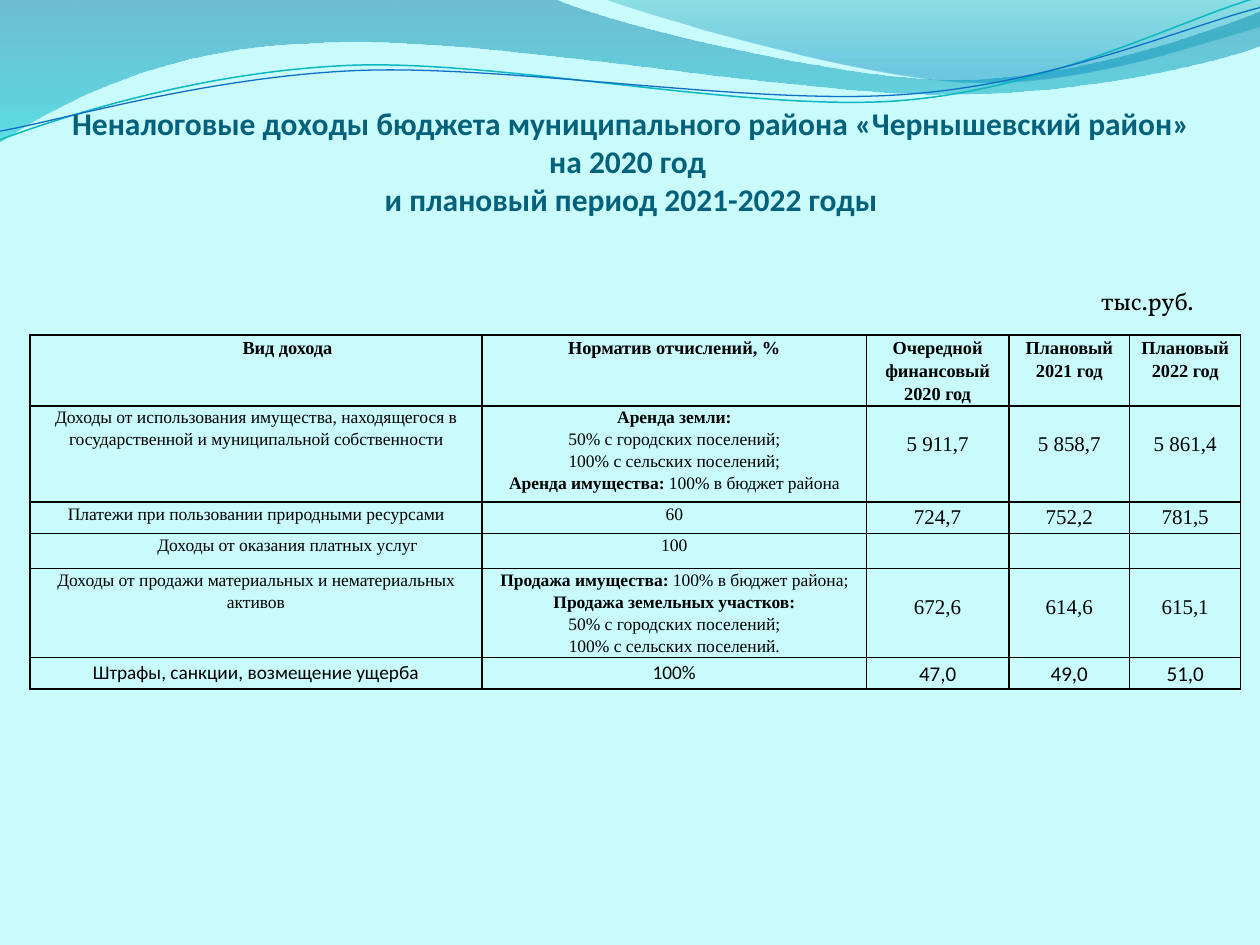
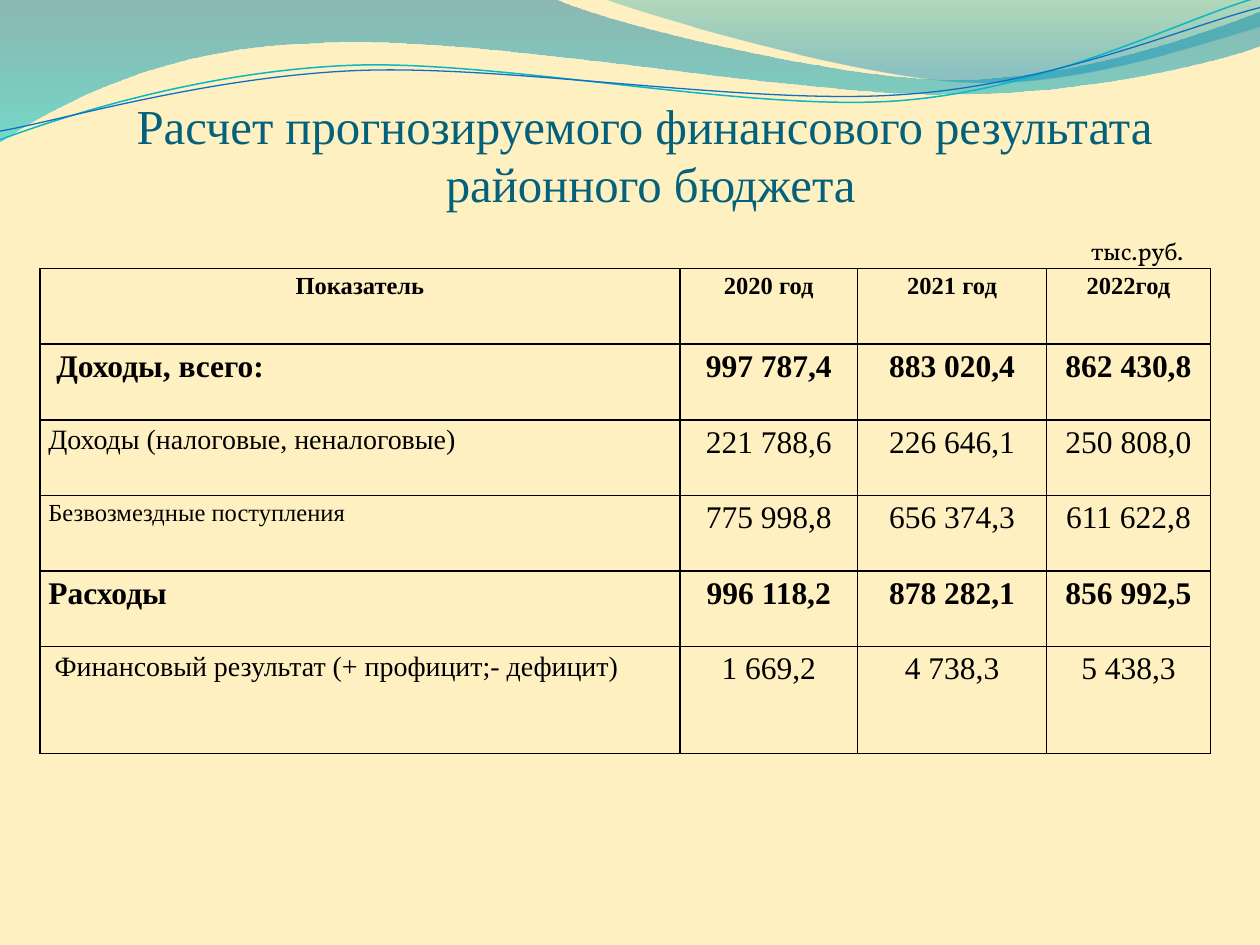
from dataclasses import dataclass, replace
from typing import Any, NamedTuple, Optional

from lxml import etree
from pptx import Presentation
from pptx.dml import color
from pptx.enum import text
from pptx.oxml import ns
from pptx.util import Pt

SERIF, SANS, LABEL_FONT = "Times New Roman", "Calibri", "Vollkorn"
TITLE_COLOR, INK = "04617B", "000000"
CENTER, JUSTIFY = text.PP_ALIGN.CENTER, text.PP_ALIGN.JUSTIFY


class Box(NamedTuple):
    left: float
    top: float
    width: float
    height: float


class Stop(NamedTuple):
    position: float
    color: str
    opacity: int


@dataclass(frozen=True)
class Wave:
    start: tuple
    segments: tuple
    stops: tuple = ()
    line_color: str = ""
    line_width: float = 0


@dataclass(frozen=True)
class Style:
    size: float
    font: str = SERIF
    bold: bool = False
    color: str = INK
    align: Any = CENTER
    line_spacing: Optional[float] = None
    space_after: float = 0


@dataclass(frozen=True)
class Cell:
    words: str
    style: Style
    left: float = 4.9
    right: float = 4.9
    top: float = 0


@dataclass(frozen=True)
class Row:
    height: float
    cells: tuple


@dataclass(frozen=True)
class BudgetSlide:
    background: str
    title: str
    title_box: Box
    title_style: Style
    unit_box: Box
    table_left: float
    table_top: float
    columns: tuple
    rows: tuple


WAVES = (
    Wave((0, 0), (
        ((316.8, -0.7),),
        ((342.7, 12.2), (478.1, 45.4), (545.8, 45.4)),
        ((614.2, 45.4), (689.8, 18.7), (720, 6.5)),
        ((720.7, 25.9),),
        ((707.8, 31.7), (626.4, 54.7), (537.1, 54)),
        ((447.8, 54), (275, 20.2), (185, 24.5)),
        ((92.9, 25.9), (33.1, 59.8), (-0.7, 81.4)),
    ), stops=(Stop(0, "0074A1", 45), Stop(1, "00C6CF", 55))),
    Wave((344.9, -0.7), (
        ((366.5, 7.9), (491, 44.6), (553.7, 46.8)),
        ((616.3, 49.7), (691.9, 23), (720, 15.1)),
        ((720, 0),),
    ), stops=(Stop(0, "00A1A9", 30), Stop(0.8, "008BBF", 45))),
    Wave((0, 79.9), (
        ((34.6, 67), (113.8, 41), (199.4, 37.4)),
        ((284.4, 33.8), (427, 64.1), (513.4, 57.6)),
        ((599.8, 51.1), (675.4, 10.8), (718.6, -1.4)),
    ), line_color="0AB8BF", line_width=0.85),
    Wave((0, 74.9), (
        ((33.8, 69.1), (118.1, 43.9), (203.8, 40.3)),
        ((290.2, 36.7), (429.8, 60.5), (516.2, 54)),
        ((601.9, 48.2), (677.5, 15.1), (720, 4.3)),
    ), line_color="0F6FC6", line_width=0.75),
)

VALUE = Style(12, line_spacing=1.15)
BODY = Style(10, line_spacing=Pt(12.55))
FINES = Style(11, SANS, line_spacing=1.15)
HEADER = Style(10.5, bold=True, line_spacing=Pt(13.2))
UNIT = Style(14, LABEL_FONT)
RESULT = Style(18, line_spacing=1.15, space_after=10)
RESULT_BOLD = replace(RESULT, bold=True)


def income_row(height: float, kind: str, norm: str, values: tuple,
               indent: float = 0, drop: float = 0, body: Style = BODY) -> Row:
    figure = replace(VALUE, font=body.font) if any(values) else body
    return Row(height, (Cell(kind, body, left=4.9 + indent), Cell(norm, body),
                        *(Cell(value, figure, top=drop) for value in values)))


def result_row(height: float, name: str, values: tuple, size: float,
               bold: bool = False, indent: float = 0) -> Row:
    label = replace(RESULT, size=size, bold=bold, align=JUSTIFY)
    figure = RESULT_BOLD if bold else RESULT
    return Row(height, (Cell(name, label, left=4.9 + indent),
                        *(Cell(value, figure) for value in values)))


def header_row(height: float, names: tuple, style: Style, margin: float,
               indent: float = 0) -> Row:
    return Row(height, tuple(
        Cell(name, style, left=margin + (0 if index else indent), right=margin)
        for index, name in enumerate(names)))


SLIDES = (
    BudgetSlide(
        "C9FAFC",
        "Неналоговые доходы бюджета муниципального района «Чернышевский район» "
        "на 2020 год \vи плановый период 2021-2022 годы",
        Box(33.8, 73.4, 653.8, 51.1), Style(18, SANS, True, TITLE_COLOR),
        Box(607.7, 163.4, 95.8, 16.6), 17, 191.4,
        (258.5, 219.6, 81.4, 69.1, 63.4),
        (
            header_row(40.5, ("Вид дохода", "Норматив отчислений, %",
                              "Очередной финансовый 2020 год",
                              "Плановый 2021 год", "Плановый 2022 год"),
                       HEADER, 2.2, indent=36),
            income_row(55, "Доходы от использования имущества, находящегося в "
                       "государственной и муниципальной собственности",
                       "Аренда земли:|\n50% с городских поселений;\n"
                       "100% с сельских поселений;\n"
                       "Аренда имущества:| 100% в бюджет района",
                       ("5 911,7", "5 858,7", "5 861,4"), drop=13.5),
            income_row(18, "Платежи при пользовании природными ресурсами", "60",
                       ("724,7", "752,2", "781,5")),
            income_row(20, "Доходы от оказания платных услуг", "100",
                       ("", "", ""), indent=36),
            income_row(51, "Доходы от продажи материальных и нематериальных активов",
                       "Продажа имущества:| 100% в бюджет района;\n"
                       "Продажа земельных участков:|\n50% с городских поселений;\n"
                       "100% с сельских поселений.",
                       ("672,6", "614,6", "615,1"), drop=13.5),
            income_row(18, "Штрафы, санкции, возмещение ущерба", "100%",
                       ("47,0", "49,0", "51,0"), body=FINES),
        )),
    BudgetSlide(
        "FFF0C2",
        "Расчет прогнозируемого финансового результата \vрайонного бюджета",
        Box(56.2, 70.4, 631.4, 51.1), Style(27.9, color=TITLE_COLOR),
        Box(601.9, 134.8, 95.8, 16.6), 22.8, 153.5,
        (365.8, 101.5, 108, 93.6),
        (
            header_row(43.2, ("Показатель", "2020 год", "2021 год", "2022год"),
                       replace(RESULT_BOLD, size=14), 4.9),
            result_row(43.2, "Доходы, всего:",
                       ("997 787,4", "883 020,4", "862 430,8"), 18, True, 4.5),
            result_row(43.2, "Доходы (налоговые, неналоговые)",
                       ("221 788,6", "226 646,1", "250 808,0"), 16),
            result_row(43.2, "Безвозмездные поступления",
                       ("775 998,8", "656 374,3", "611 622,8"), 14),
            result_row(43.2, "Расходы",
                       ("996 118,2", "878 282,1", "856 992,5"), 18, True),
            result_row(61.2, "Финансовый результат (+ профицит;- дефицит)",
                       ("1 669,2", "4 738,3", "5 438,3"), 16, indent=3.5),
        )),
)


def rgb(value: str) -> color.RGBColor:
    return color.RGBColor.from_string(value)


def apply_format(target: Any, values: dict) -> None:
    for name, value in values.items():
        setattr(target, name, value)


def write_text(frame: Any, words: str, style: Style) -> None:
    for index, line in enumerate(words.split("\n")):
        paragraph = frame.paragraphs[0] if index == 0 else frame.add_paragraph()
        apply_format(paragraph, {"alignment": style.align,
                                 "line_spacing": style.line_spacing,
                                 "space_after": Pt(style.space_after)})
        lead, mark, rest = line.partition("|")
        pieces = [(lead, style.bold or bool(mark)), (rest, False)]
        for piece, bold in filter(lambda pair: pair[0], pieces):
            for number, part in enumerate(piece.split("\v")):
                if number:
                    paragraph.add_line_break()
                run = paragraph.add_run()
                run.text = part
                apply_format(run.font, {"name": style.font, "size": Pt(style.size),
                                        "bold": bold})
                run.font.color.rgb = rgb(style.color)
        etree.SubElement(paragraph._p, ns.qn("a:endParaRPr"),
                         sz=str(round(style.size * 100)))


def add_text(slide: Any, box: Box, words: str, style: Style, frame_format: dict) -> None:
    frame = slide.shapes.add_textbox(*map(Pt, box)).text_frame
    apply_format(frame, {"word_wrap": True, **frame_format})
    write_text(frame, words, style)


def bend_outline(shape: Any, segments: tuple) -> None:
    lines = iter(list(shape.element.iter(ns.qn("a:lnTo"))))
    for segment in segments:
        steps = [next(lines) for _ in segment]
        if len(steps) == 1:
            continue
        curve = etree.Element(ns.qn("a:cubicBezTo"))
        steps[0].addprevious(curve)
        for step in steps:
            curve.append(step[0])
            step.getparent().remove(step)


def add_wave(slide: Any, wave: Wave) -> None:
    builder = slide.shapes.build_freeform(*map(Pt, wave.start))
    builder.add_line_segments([(Pt(x), Pt(y)) for segment in wave.segments
                               for x, y in segment], close=False)
    shape = builder.convert_to_shape()
    bend_outline(shape, wave.segments)
    shape.shadow.inherit = False
    if not wave.stops:
        shape.fill.background()
        shape.line.color.rgb = rgb(wave.line_color)
        shape.line.width = Pt(wave.line_width)
        return
    shape.line.fill.background()
    shape.fill.gradient()
    shape.fill.gradient_angle = 270
    for target, stop in zip(shape.fill.gradient_stops, wave.stops):
        target.position = stop.position
        target.color.rgb = rgb(stop.color)
    for node, stop in zip(shape.element.iter(ns.qn("a:srgbClr")), wave.stops):
        etree.SubElement(node, ns.qn("a:alpha"), val=str(stop.opacity * 1000))


def add_borders(cell: Any) -> None:
    properties = cell._tc.get_or_add_tcPr()
    for side in "LRTB":
        line = etree.SubElement(properties, ns.qn(f"a:ln{side}"), w=str(Pt(1)))
        fill = etree.SubElement(line, ns.qn("a:solidFill"))
        etree.SubElement(fill, ns.qn("a:srgbClr"), val=INK)


def add_budget_table(slide: Any, content: BudgetSlide) -> None:
    box = Box(content.table_left, content.table_top, sum(content.columns),
              sum(row.height for row in content.rows))
    table = slide.shapes.add_table(len(content.rows), len(content.columns),
                                   *map(Pt, box)).table
    apply_format(table, {"first_row": False, "horz_banding": False})
    for column, width in zip(table.columns, content.columns):
        column.width = Pt(width)
    for table_row, row in zip(table.rows, content.rows):
        table_row.height = Pt(row.height)
        for target, cell in zip(table_row.cells, row.cells):
            apply_format(target, {"margin_left": Pt(cell.left),
                                  "margin_right": Pt(cell.right),
                                  "margin_top": Pt(cell.top), "margin_bottom": Pt(0)})
            add_borders(target)
            target.fill.background()
            write_text(target.text_frame, cell.words, cell.style)


def add_budget_slide(presentation: Any, content: BudgetSlide) -> None:
    slide = presentation.slides.add_slide(presentation.slide_layouts[6])
    slide.background.fill.solid()
    slide.background.fill.fore_color.rgb = rgb(content.background)
    for wave in WAVES:
        add_wave(slide, wave)
    add_text(slide, content.title_box, content.title, content.title_style,
             {"vertical_anchor": text.MSO_ANCHOR.BOTTOM, "margin_left": Pt(0),
              "margin_right": Pt(0), "margin_top": Pt(3.6), "margin_bottom": Pt(0)})
    add_budget_table(slide, content)
    add_text(slide, content.unit_box, "тыс.руб.", UNIT,
             {"vertical_anchor": text.MSO_ANCHOR.MIDDLE})


def main() -> None:
    presentation = Presentation()
    apply_format(presentation, {"slide_width": Pt(720), "slide_height": Pt(540)})
    for content in SLIDES:
        add_budget_slide(presentation, content)
    presentation.save("out.pptx")


if __name__ == "__main__":
    main()
